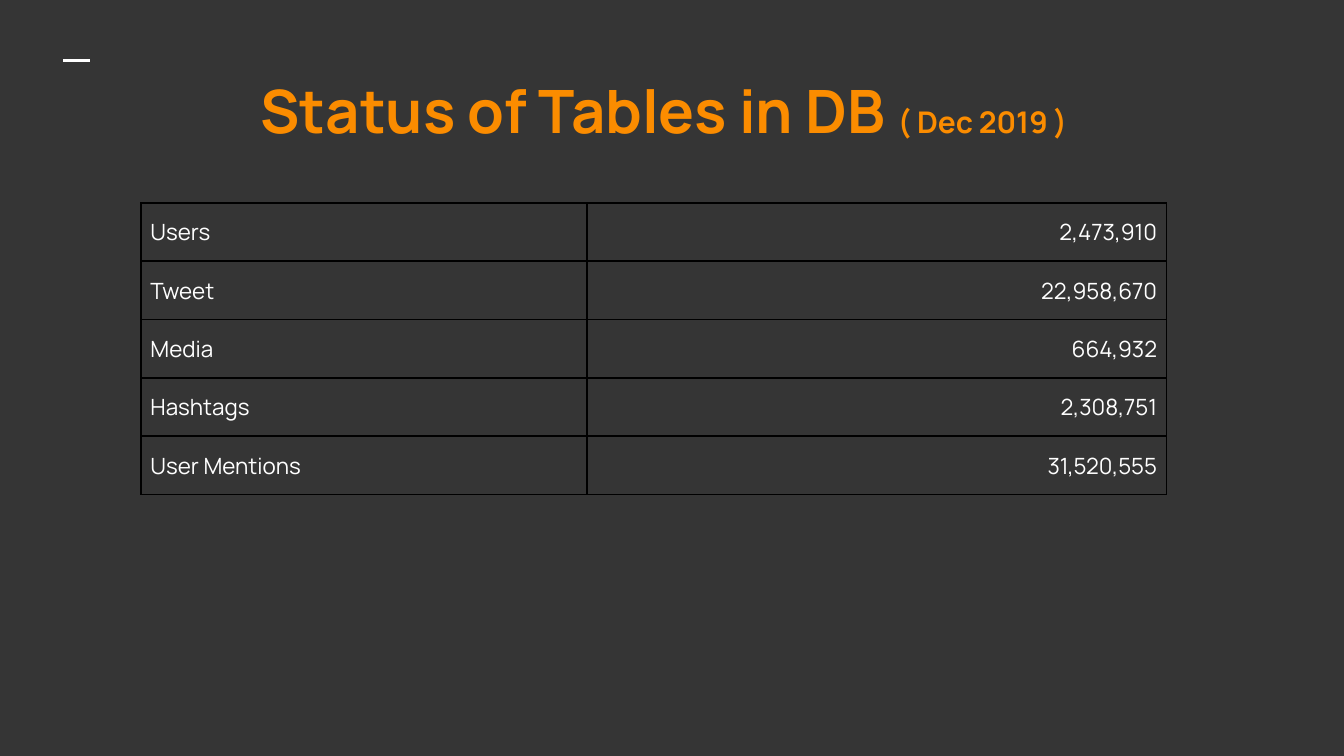
from lxml.etree import SubElement
from pptx import Presentation
from pptx.dml.color import RGBColor
from pptx.enum.shapes import MSO_CONNECTOR
from pptx.enum.text import MSO_ANCHOR, PP_ALIGN
from pptx.oxml.ns import qn
from pptx.util import Inches, Pt

TITLE = [("Status of Tables in DB ", 32), ("( Dec 2019 )", 16)]
ROWS = [
    ("Users", "2,473,910"),
    ("Tweet", "22,958,670"),
    ("Media", "664,932"),
    ("Hashtags", "2,308,751"),
    ("User Mentions", "31,520,555"),
]
COLORS = {"background": "353535", "accent": "FB8C00", "text": "FFFFFF", "border": "000000"}
FONT = "Manrope"
COLUMN_WIDTHS = (3.32, 4.31)
COLUMN_ALIGNS = (PP_ALIGN.LEFT, PP_ALIGN.RIGHT)
TABLE_HEIGHT = 2.17


def color(name):
    return RGBColor.from_string(COLORS[name])


def write(paragraph, text, size=12, fill="text", bold=False, align=PP_ALIGN.LEFT, spacing=1.0):
    paragraph.alignment = align
    paragraph.line_spacing = spacing
    run = paragraph.add_run()
    run.text = text
    run.font.name = FONT
    run.font.size = Pt(size)
    run.font.bold = bold
    run.font.color.rgb = color(fill)


def set_margins(box, margin):
    box.margin_left = box.margin_right = Inches(margin)
    box.margin_top = box.margin_bottom = Inches(margin)


def add_borders(cell, width=1):
    properties = cell._tc.get_or_add_tcPr()
    for position, side in enumerate(("lnL", "lnR", "lnT", "lnB")):
        line = SubElement(properties, qn(f"a:{side}"), w=str(Pt(width)))
        fill = SubElement(line, qn("a:solidFill"))
        SubElement(fill, qn("a:srgbClr"), val=COLORS["border"])
        # Borders come before the cell fill in the schema
        properties.insert(position, line)


# Widescreen slide, 16:9
presentation = Presentation()
presentation.slide_width = Inches(10)
presentation.slide_height = Inches(10 * 9 / 16)
slide = presentation.slides.add_slide(presentation.slide_layouts[6])
slide.background.fill.solid()
slide.background.fill.fore_color.rgb = color("background")

# Short dash above the title
dash = slide.shapes.add_connector(
    MSO_CONNECTOR.STRAIGHT, Inches(0.47), Inches(0.45), Inches(0.67), Inches(0.45))
dash.line.color.rgb = color("text")
dash.line.width = Pt(1.5)
SubElement(dash._element.spPr, qn("a:effectLst"))

# Title
title = slide.shapes.add_textbox(Inches(0.32), Inches(0.45), Inches(9.24), Inches(1.77))
title_frame = title.text_frame
title_frame.word_wrap = True
title_frame.vertical_anchor = MSO_ANCHOR.TOP
set_margins(title_frame, 0.1)
for text, size in TITLE:
    write(title_frame.paragraphs[0], text, size=size, fill="accent", bold=True,
          align=PP_ALIGN.CENTER)

# Table of row counts
table = slide.shapes.add_table(
    len(ROWS), len(COLUMN_WIDTHS), Inches(1.05), Inches(1.51),
    Inches(sum(COLUMN_WIDTHS)), Inches(TABLE_HEIGHT)).table
table.first_row = table.horz_banding = False
for column, width in zip(table.columns, COLUMN_WIDTHS):
    column.width = Inches(width)
for row, values in zip(table.rows, ROWS):
    row.height = Inches(TABLE_HEIGHT / len(ROWS))
    for cell, text, align in zip(row.cells, values, COLUMN_ALIGNS):
        set_margins(cell, 0.07)
        cell.fill.background()
        add_borders(cell)
        write(cell.text_frame.paragraphs[0], text, align=align, spacing=1.15)

presentation.save("out.pptx")
